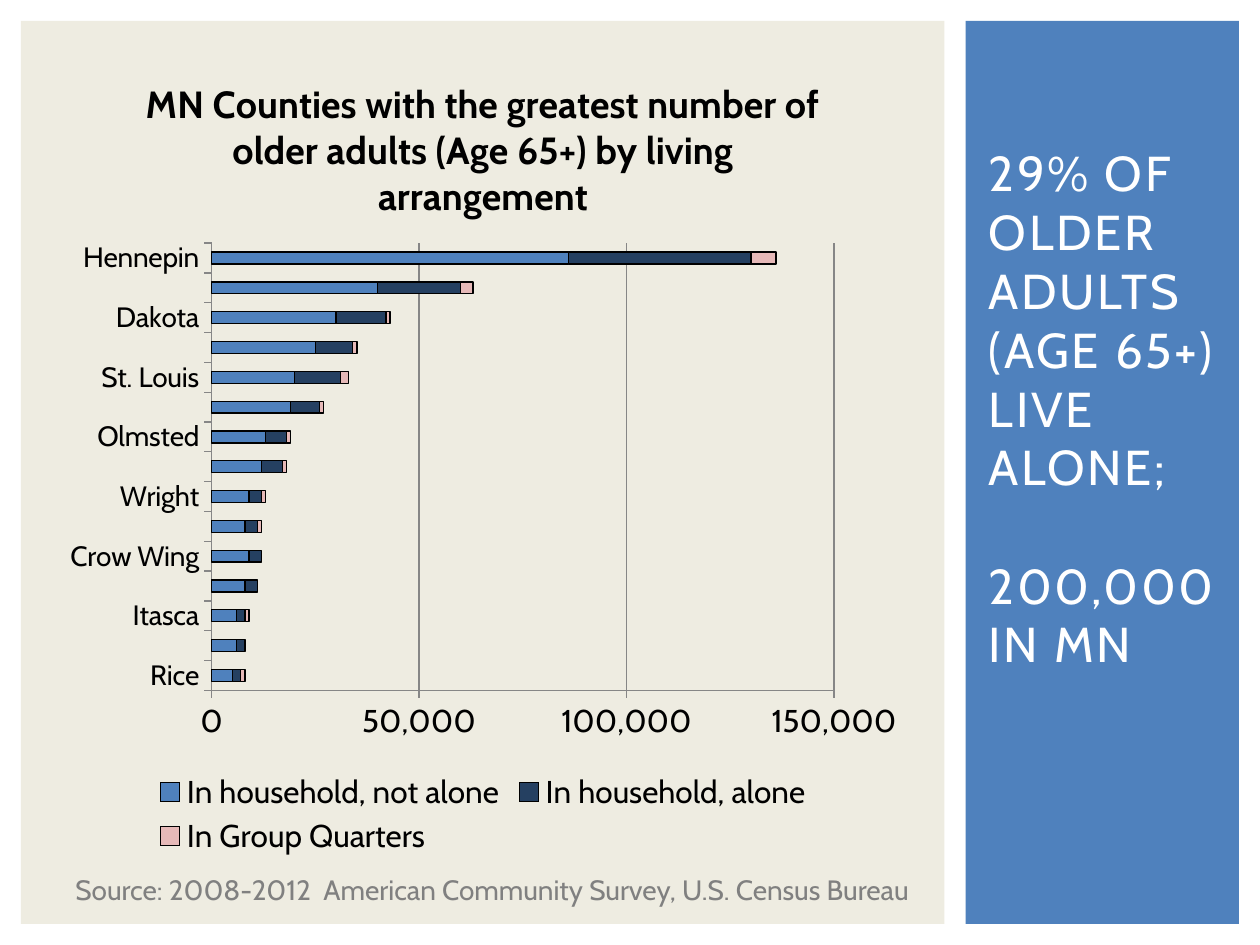
"""Build a slide on the living arrangements of older adults in Minnesota counties."""
from lxml import etree
from pptx import Presentation
from pptx.chart.data import CategoryChartData
from pptx.dml.color import RGBColor
from pptx.enum.chart import XL_CHART_TYPE, XL_LEGEND_POSITION, XL_TICK_MARK
from pptx.enum.shapes import MSO_SHAPE
from pptx.enum.text import MSO_ANCHOR
from pptx.oxml import parse_xml
from pptx.util import Inches, Pt

BAR = XL_CHART_TYPE.BAR_STACKED
BOTTOM = XL_LEGEND_POSITION.BOTTOM
OUTSIDE = XL_TICK_MARK.OUTSIDE
RECTANGLE = MSO_SHAPE.RECTANGLE
ANCHOR_BOTTOM = MSO_ANCHOR.BOTTOM
CHART_NS = "http://schemas.openxmlformats.org/drawingml/2006/chart"

WIDTH, HEIGHT = 10, 7.5
MARGIN = WIDTH / 60
MAIN_WIDTH = 7.33
SIDE_LEFT = MAIN_WIDTH + 2 * MARGIN
FONT = "Cabin"
COLORS = {"white": "FFFFFF", "blue": "4F81BD", "navy": "254061", "pink": "E6B9B8",
          "cream": "EEECE1", "gray": "808080", "axis": "868686", "black": "000000"}

HEADLINE = ["29% OF OLDER ADULTS (AGE 65+) LIVE ALONE;", "200,000 IN MN"]
SOURCE = ["Source: 2008-2012  American Community Survey, U.S. Census Bureau"]
CHART_TITLE = ["MN Counties with the greatest number of",
               "older adults (Age 65+) by living arrangement"]
SERIES = [("In household, not alone", "blue"), ("In household, alone", "navy"),
          ("In Group Quarters", "pink")]
COUNTIES = [
    ("Rice", 5000, 2000, 1000),
    ("", 6000, 2000, 0),
    ("Itasca", 6000, 2000, 1000),
    ("", 8000, 3000, 0),
    ("Crow Wing", 9000, 3000, 0),
    ("", 8000, 3000, 1000),
    ("Wright", 9000, 3000, 1000),
    ("", 12000, 5000, 1000),
    ("Olmsted", 13000, 5000, 1000),
    ("", 19000, 7000, 1000),
    ("St. Louis", 20000, 11000, 2000),
    ("", 25000, 9000, 1000),
    ("Dakota", 30000, 12000, 1000),
    ("", 40000, 20000, 3000),
    ("Hennepin", 86000, 44000, 6000),
]
PANELS = [
    ("white", 0, 0, WIDTH, HEIGHT),
    ("blue", SIDE_LEFT, MARGIN, WIDTH - MARGIN - SIDE_LEFT, HEIGHT - 2 * MARGIN),
    ("cream", MARGIN, MARGIN, MAIN_WIDTH, HEIGHT - 2 * MARGIN),
]
CHART_LEFT, CHART_TOP, CHART_WIDTH, CHART_HEIGHT = 0.42, 0.42, 6.83, 6.42
PLOT_SHARES = {"x": 1.26 / CHART_WIDTH, "y": 1.51 / CHART_HEIGHT,
               "w": 4.94 / CHART_WIDTH, "h": 3.55 / CHART_HEIGHT}


def color(name):
    return RGBColor.from_string(COLORS[name])


def style(font, size, name, bold=False):
    font.name, font.size, font.bold = FONT, Pt(size), bold
    font.color.rgb = color(name)


def draw_line(line, name):
    line.color.rgb = color(name)
    line.width = Pt(0.75)


def write(frame, lines, size, name, bold=False, gap=0, spacing=0):
    for index, text in enumerate(lines):
        para = frame.add_paragraph() if index else frame.paragraphs[0]
        if index and gap:
            para.space_before = Pt(gap)
        span = para.add_run()
        span.text = text
        style(span.font, size, name, bold)
        if spacing:
            span.font._element.set("spc", str(int(spacing * 100)))


def add_text(page, place, lines, size, name, **options):
    box = page.shapes.add_textbox(*map(Inches, place))
    box.text_frame.word_wrap = True
    write(box.text_frame, lines, size, name, **options)
    return box


def place_plot(chart):
    layout = parse_xml(f'<c:layout xmlns:c="{CHART_NS}"><c:manualLayout/></c:layout>')
    settings = [("layoutTarget", "inner"), ("xMode", "edge"), ("yMode", "edge"),
                *PLOT_SHARES.items()]
    for tag, value in settings:
        etree.SubElement(layout[0], f"{{{CHART_NS}}}{tag}").set("val", str(value))
    plot_area = chart._chartSpace.chart.plotArea
    for old in plot_area.findall(f"{{{CHART_NS}}}layout"):
        plot_area.remove(old)
    plot_area.insert(0, layout)


def add_county_chart(page):
    data = CategoryChartData(number_format="#,##0")
    names, *columns = zip(*COUNTIES)
    data.categories = names
    for (label, _), values in zip(SERIES, columns):
        data.add_series(label, values)
    place = map(Inches, (CHART_LEFT, CHART_TOP, CHART_WIDTH, CHART_HEIGHT))
    chart = page.shapes.add_chart(BAR, *place, data).chart
    style(chart.font, 18, "black")
    chart.has_title = True
    write(chart.chart_title.text_frame, CHART_TITLE, 21.6, "black", bold=True)
    chart.has_legend = True
    chart.legend.position = BOTTOM
    chart.legend.include_in_layout = False
    style(chart.legend.font, 18, "black")

    plot = chart.plots[0]
    plot.gap_width, plot.overlap, plot.vary_by_categories = 150, 100, False
    for series, (_, name) in zip(plot.series, SERIES):
        series.format.fill.solid()
        series.format.fill.fore_color.rgb = color(name)
        draw_line(series.format.line, "black")

    values = chart.value_axis
    for axis, size in ((chart.category_axis, 16), (values, 18)):
        axis.major_tick_mark = OUTSIDE
        style(axis.tick_labels.font, size, "black")
        draw_line(axis.format.line, "axis")
    values.minimum_scale, values.maximum_scale, values.major_unit = 0, 150000, 50000
    values.has_major_gridlines = True
    draw_line(values.major_gridlines.format.line, "axis")
    values.tick_labels.number_format = "#,##0"
    values.tick_labels.number_format_is_linked = False
    place_plot(chart)


def main():
    deck = Presentation()
    deck.slide_width, deck.slide_height = Inches(WIDTH), Inches(HEIGHT)
    page = deck.slides.add_slide(deck.slide_layouts[6])
    page.background.fill.solid()
    page.background.fill.fore_color.rgb = color("cream")
    for name, *place in PANELS:
        panel = page.shapes.add_shape(RECTANGLE, *map(Inches, place))
        panel.shadow.inherit = False
        panel.fill.solid()
        panel.fill.fore_color.rgb = color(name)
        panel.line.fill.background()
    headline = add_text(page, (7.75, 0.75, 2.09, 5.58), HEADLINE, 28, "white",
                        gap=34, spacing=1.5)
    headline.text_frame.vertical_anchor = ANCHOR_BOTTOM
    headline.text_frame.margin_bottom = Inches(0.99)
    add_text(page, (0.5, 6.88, 8.08, 0.37), SOURCE, 16, "gray")
    add_county_chart(page)
    deck.save("out.pptx")


if __name__ == "__main__":
    main()
